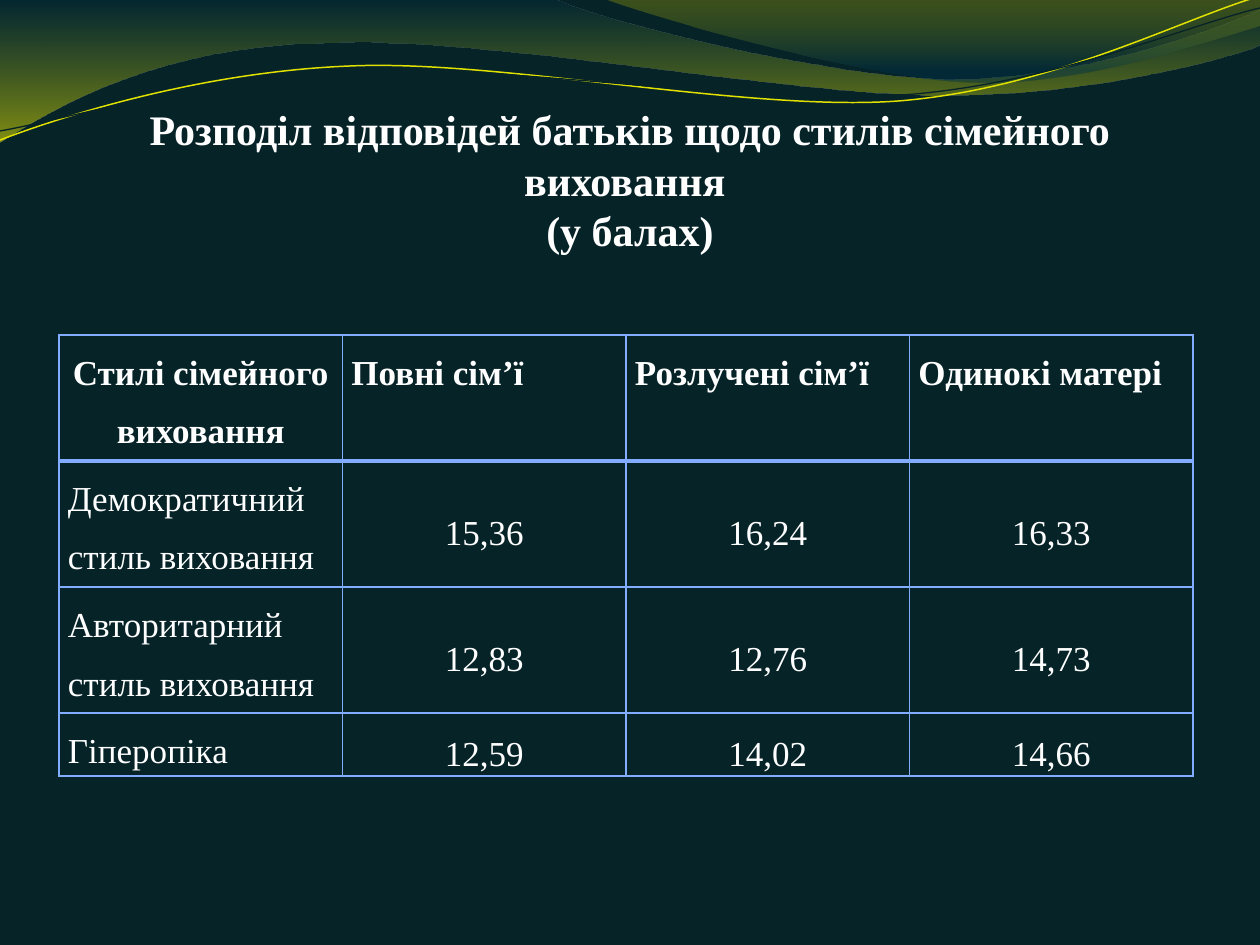
from dataclasses import dataclass
from lxml.etree import SubElement
from pptx import Presentation
from pptx.dml.color import RGBColor
from pptx.enum.text import MSO_ANCHOR, PP_ALIGN
from pptx.oxml.ns import qn
from pptx.util import Emu, Pt

TITLE = "Розподіл відповідей батьків щодо стилів сімейного виховання \v(у балах)"
ROWS = [
    ("Стилі сімейного виховання", "Повні сім’ї", "Розлучені сім’ї", "Одинокі матері"),
    ("Демократичний стиль виховання", "15,36", "16,24", "16,33"),
    ("Авторитарний стиль виховання", "12,83", "12,76", "14,73"),
    ("Гіперопіка", "12,59", "14,02", "14,66"),
]


@dataclass(frozen=True)
class Theme:
    back: str = "062328"
    text: str = "FFFFFF"
    rule: str = "82ACFF"
    gold: str = "E1E100"
    font: str = "Times New Roman"
    title: int = 24
    body: int = 20


THEME = Theme()
WAVES = [
    ([(0, 0), (554, -1), (600, 21, 837, 79, 955, 79), (1075, 79, 1207, 33, 1260, 11),
      (1261, 45), (1239, 55, 1096, 96, 940, 95), (784, 95, 481, 35, 324, 43),
      (163, 45, 58, 105, -1, 142)],
     [(0, "002B3C", 45), (1, "E7E700", 55)]),
    ([(604, -1), (641, 14, 859, 78, 969, 82), (1079, 87, 1211, 40, 1260, 26), (1260, 0)],
     [(0, "BDBD00", 30), (0.8, "003347", 45)]),
]
LINES = [
    ([(0, 140), (60, 117, 199, 72, 349, 66), (498, 59, 747, 112, 898, 101),
      (1050, 89, 1182, 19, 1257, -3)], THEME.gold, 0.85),
    ([(0, 131), (59, 121, 207, 77, 357, 71), (508, 64, 752, 106, 903, 95),
      (1053, 84, 1185, 26, 1260, 8)], THEME.back, 0.75),
]
SCALE = 914400 / 126


def px(n):
    return Emu(round(n * SCALE))


def rgb(code):
    return RGBColor.from_string(code)


def draw(slide, path, close):
    spots = [part[i:i + 2] for part in path for i in range(0, len(part), 2)]
    pen = slide.shapes.build_freeform(*spots[0], scale=SCALE)
    pen.add_line_segments(spots[1:], close=close)
    shape = pen.convert_to_shape()
    shape.shadow.inherit = False
    nodes = iter(list(shape.element.iter(qn("a:lnTo"))))
    for part in path[1:]:
        curve = next(nodes)
        if len(part) == 6:
            curve.tag = qn("a:cubicBezTo")
            for extra in (next(nodes), next(nodes)):
                curve.append(extra[0])
                extra.getparent().remove(extra)
    return shape


def add_wave(slide, path, stops):
    shape = draw(slide, path, True)
    shape.line.fill.background()
    shape.fill.gradient()
    shape.fill.gradient_angle = 270
    for stop, (place, code, _) in zip(shape.fill.gradient_stops, stops):
        stop.position = place
        stop.color.rgb = rgb(code)
    for node, (_, _, alpha) in zip(shape.element.iter(qn("a:srgbClr")), stops):
        SubElement(node, qn("a:alpha")).set("val", str(alpha * 1000))


def add_line(slide, path, code, width):
    shape = draw(slide, path, False)
    shape.fill.background()
    shape.line.color.rgb = rgb(code)
    shape.line.width = Pt(width)


def style(para, size, bold, align, space):
    para.alignment = align
    para.line_spacing = space
    for run in para.runs:
        font = run.font
        font.name, font.size, font.bold = THEME.font, Pt(size), bold
        font.color.rgb = rgb(THEME.text)


def add_title(slide):
    box = slide.shapes.add_textbox(px(63), px(97), px(1134), px(158))
    frame = box.text_frame
    frame.word_wrap = True
    frame.vertical_anchor = MSO_ANCHOR.BOTTOM
    frame.margin_left = frame.margin_right = frame.margin_bottom = 0
    frame.margin_top = px(6)
    frame.text = TITLE
    style(frame.paragraphs[0], THEME.title, True, PP_ALIGN.CENTER, 1.0)


def add_edge(cell, side, width):
    edge = SubElement(cell._tc.get_or_add_tcPr(), qn(f"a:ln{side}"), w=str(Pt(width)))
    fill = SubElement(edge, qn("a:solidFill"))
    SubElement(fill, qn("a:srgbClr"), val=THEME.rule)


def add_grid(slide):
    frame = slide.shapes.add_table(len(ROWS), len(ROWS[0]), px(59), px(335),
                                   px(1134), px(441))
    grid = frame.table
    for r, row in enumerate(ROWS):
        grid.rows[r].height = px(52)
        for c, text in enumerate(row):
            cell = grid.cell(r, c)
            cell.text = text
            cell.margin_left = cell.margin_right = px(9)
            cell.margin_top = cell.margin_bottom = 0
            head, label = r == 0, c == 0
            if not head and not label:
                cell.vertical_anchor = MSO_ANCHOR.MIDDLE
            align = PP_ALIGN.CENTER if head == label else PP_ALIGN.JUSTIFY
            style(cell.text_frame.paragraphs[0], THEME.body, head, align, 1.5)
            for side in "LRTB":
                thick = (r, side) in ((0, "B"), (1, "T"))
                add_edge(cell, side, 3 if thick else 1)
            cell.fill.solid()
            cell.fill.fore_color.rgb = rgb(THEME.back)
    frame.height = px(441)


def main():
    deck = Presentation()
    deck.slide_width, deck.slide_height = px(1260), px(945)
    slide = deck.slides.add_slide(deck.slide_layouts[6])
    slide.background.fill.solid()
    slide.background.fill.fore_color.rgb = rgb(THEME.back)
    for wave in WAVES:
        add_wave(slide, *wave)
    for line in LINES:
        add_line(slide, *line)
    add_title(slide)
    add_grid(slide)
    deck.save("out.pptx")


if __name__ == "__main__":
    main()
